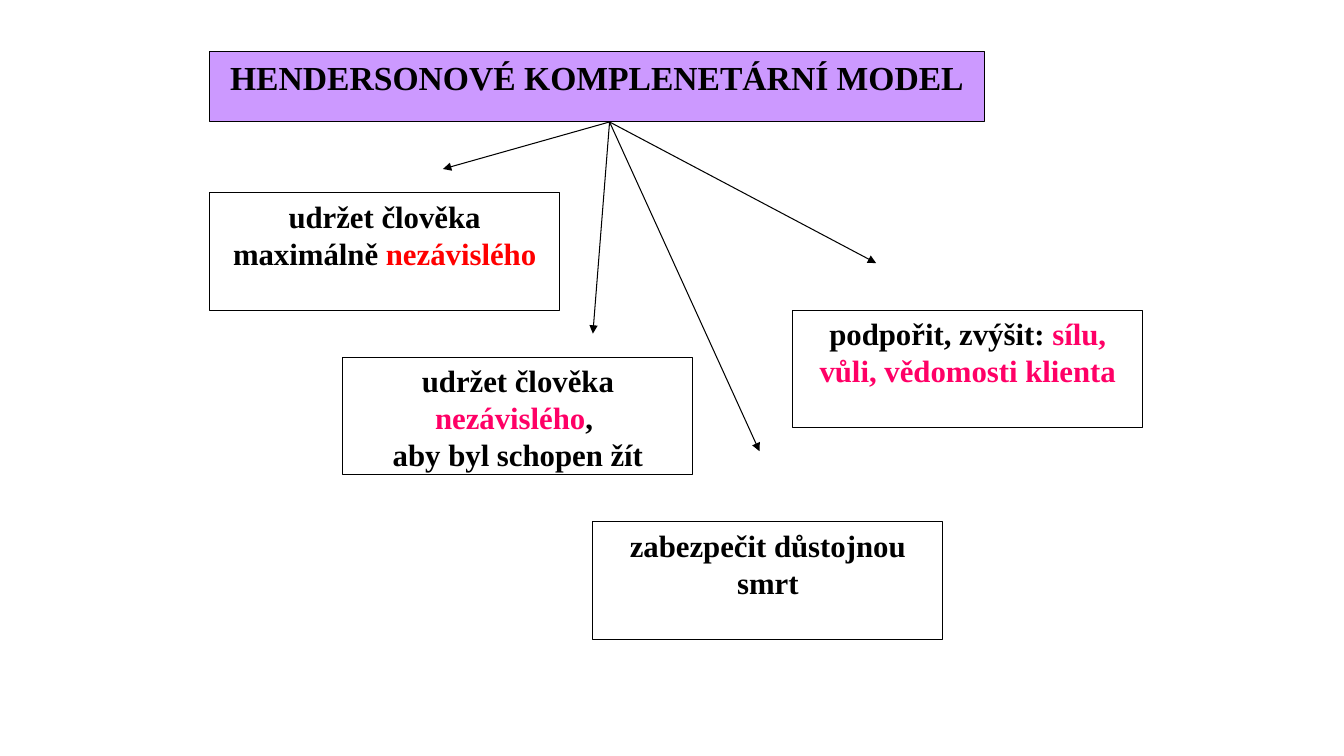
from dataclasses import dataclass

from lxml import etree
from pptx import Presentation
from pptx.dml.color import RGBColor
from pptx.enum.shapes import MSO_CONNECTOR, MSO_SHAPE
from pptx.enum.text import MSO_ANCHOR, MSO_AUTO_SIZE, PP_ALIGN
from pptx.oxml.ns import qn
from pptx.util import Inches, Pt

CENTER = PP_ALIGN.CENTER
TOP = MSO_ANCHOR.TOP
NO_FIT = MSO_AUTO_SIZE.NONE
RECT = MSO_SHAPE.RECTANGLE
STRAIGHT = MSO_CONNECTOR.STRAIGHT
TITLE_ONLY = 5
BREAK = "\n"


@dataclass(frozen=True)
class Theme:
    font: str = "Times New Roman"
    ink: str = "000000"
    lilac: str = "CC99FF"
    red: str = "FF0000"
    pink: str = "FF0066"
    title_size: int = 24
    box_size: int = 22
    line_width: float = 0.75


class Diagram:
    """Draws on one slide, with positions counted in grid columns and rows."""

    LEFT, TOP_EDGE = 2.08, 0.51
    COL, ROW = 3.47 / 21, 0.7 / 3

    def __init__(self, slide, theme):
        self.slide, self.theme = slide, theme

    def point(self, col, row):
        return (Inches(self.LEFT + col * self.COL),
                Inches(self.TOP_EDGE + row * self.ROW))

    def size(self, cols, rows):
        return Inches(cols * self.COL), Inches(rows * self.ROW)

    def outline(self, sp):
        sp.line.color.rgb = RGBColor.from_string(self.theme.ink)
        sp.line.width = Pt(self.theme.line_width)

    def fill_text(self, sp, parts, size):
        """Fill one centred paragraph with (text, colour) parts and breaks."""
        tf = sp.text_frame
        tf.word_wrap = True
        tf.auto_size = NO_FIT
        tf.vertical_anchor = TOP
        p = tf.paragraphs[0]
        p.alignment = CENTER
        for part in parts:
            if part == BREAK:
                p.add_line_break()
                continue
            r = p.add_run()
            r.text, color = part
            r.font.name = self.theme.font
            r.font.size = Pt(size)
            r.font.bold = True
            r.font.color.rgb = RGBColor.from_string(color)

    def title(self, text, cols, rows):
        sp = self.slide.shapes.title
        sp.left, sp.top = self.point(0, 0)
        sp.width, sp.height = self.size(cols, rows)
        sp.fill.solid()
        sp.fill.fore_color.rgb = RGBColor.from_string(self.theme.lilac)
        self.outline(sp)
        self.fill_text(sp, [(text, self.theme.ink)], self.theme.title_size)

    def box(self, col, row, parts, cols=21, rows=5):
        sp = self.slide.shapes.add_shape(
            RECT, *self.point(col, row), *self.size(cols, rows))
        sp.shadow.inherit = False
        sp.fill.background()
        self.outline(sp)
        self.fill_text(sp, parts, self.theme.box_size)

    def arrow(self, start, end):
        cx = self.slide.shapes.add_connector(
            STRAIGHT, *self.point(*start), *self.point(*end))
        self.outline(cx)
        props = cx._element.spPr
        etree.SubElement(props.find(qn("a:ln")), qn("a:tailEnd"),
                         type="triangle")
        etree.SubElement(props, qn("a:effectLst"))


def main():
    prs = Presentation()
    prs.slide_width, prs.slide_height = Inches(13.33), Inches(7.5)
    theme = Theme()
    slide = prs.slides.add_slide(prs.slide_layouts[TITLE_ONLY])
    diagram = Diagram(slide, theme)
    ink, red, pink = theme.ink, theme.red, theme.pink

    diagram.title("HENDERSONOVÉ KOMPLENETÁRNÍ MODEL", 46.5, 3)

    goals = [
        (0, 6, [("udržet člověka", ink), BREAK,
                ("maximálně ", ink), ("nezávislého", red)]),
        (8, 13, [("udržet člověka ", ink), ("nezávislého", pink),
                 (", ", ink), BREAK, ("aby byl schopen žít", ink)]),
        (23, 20, [("zabezpečit důstojnou smrt", ink)]),
        (35, 11, [("podpořit, zvýšit: ", ink),
                  ("sílu, vůli, vědomosti klienta", pink)]),
    ]
    for col, row, parts in goals:
        diagram.box(col, row, parts)

    for tip in [(14, 5), (23, 12), (33, 17), (40, 9)]:
        diagram.arrow((24, 3), tip)

    prs.save("out.pptx")


if __name__ == "__main__":
    main()
